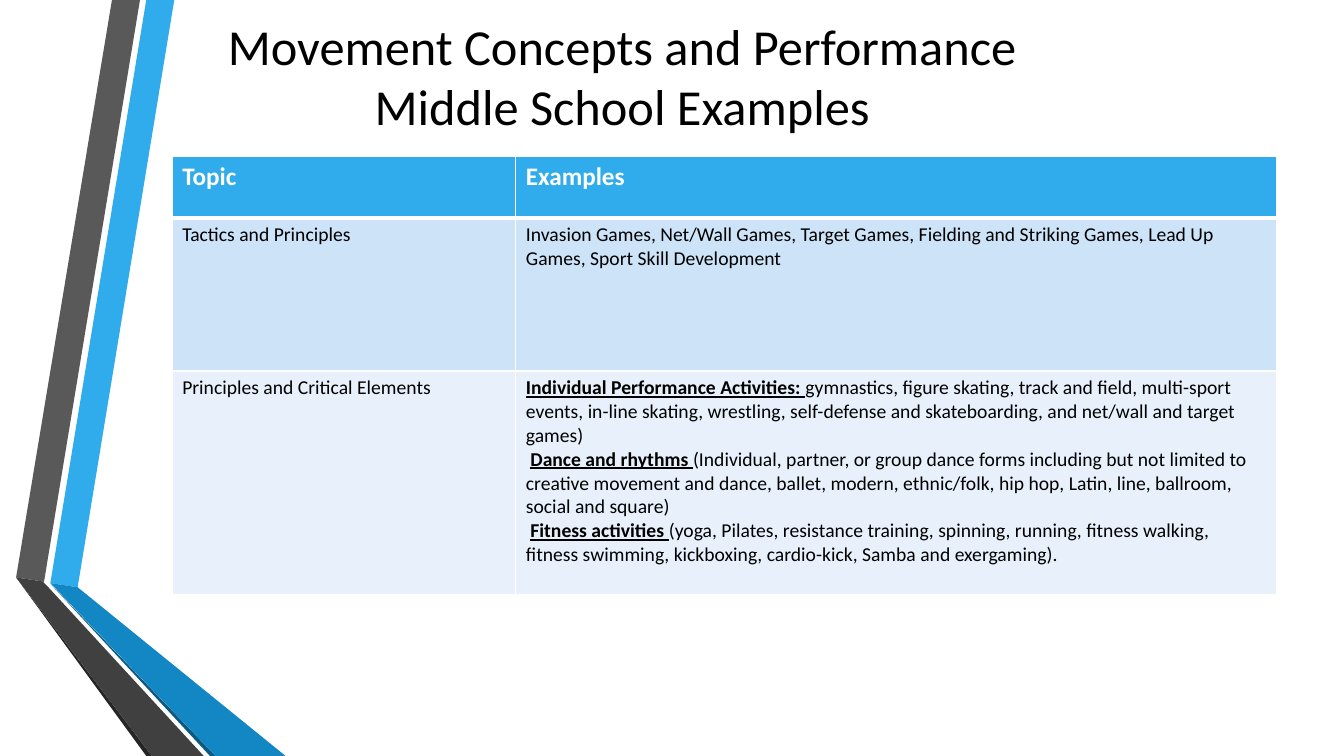
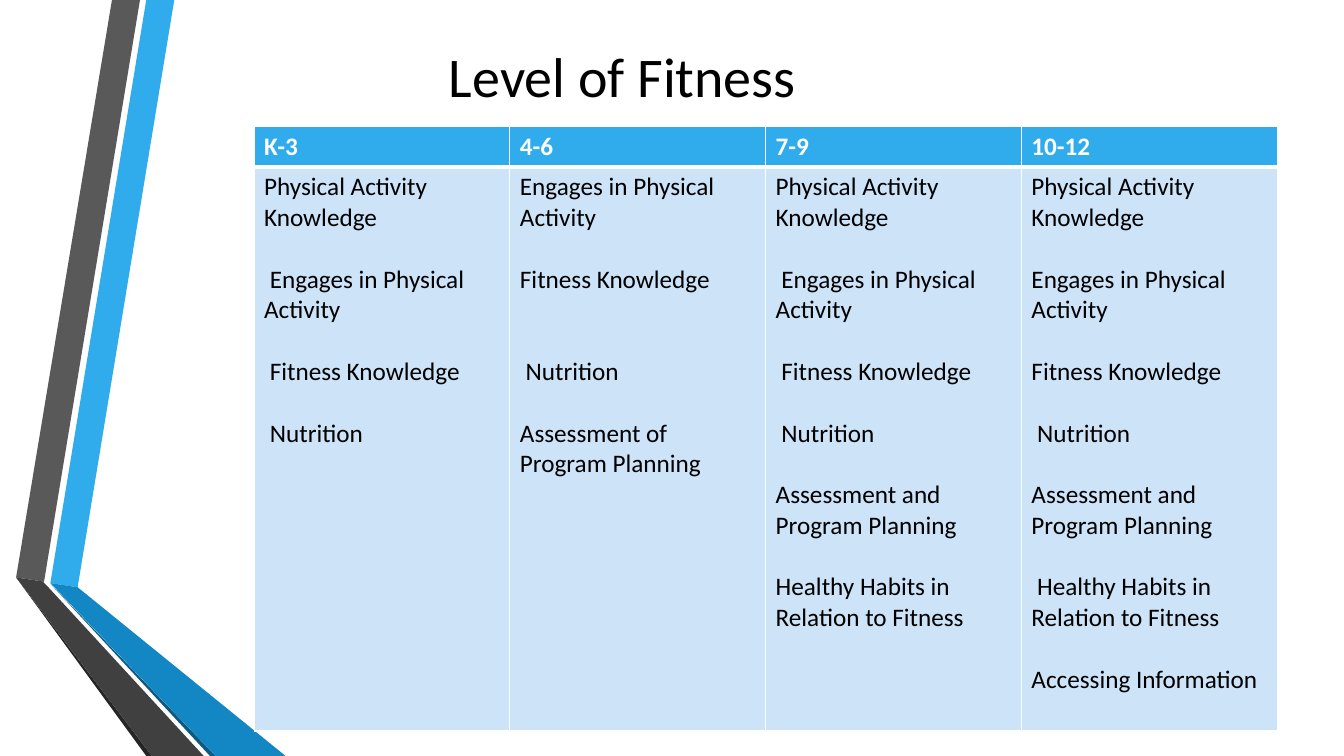
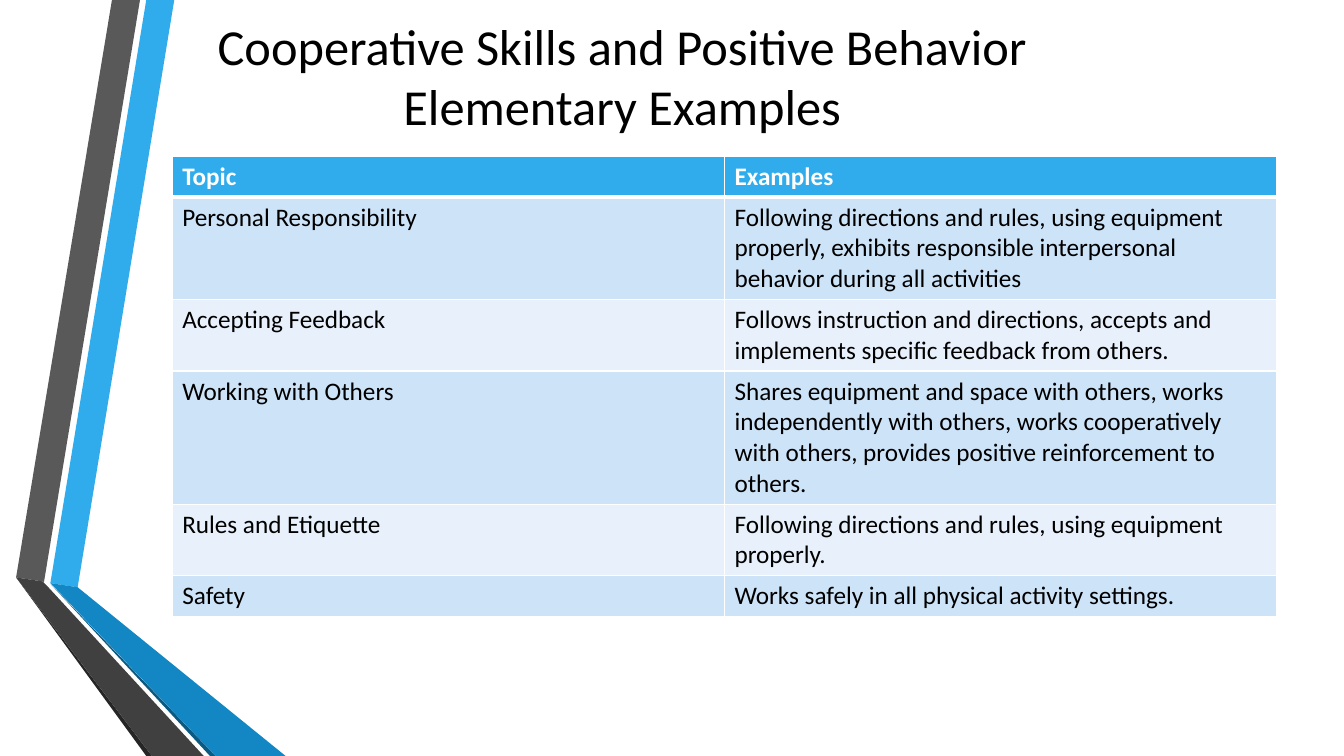
import pptx
import pptx.dml.color
import pptx.enum.text
import pptx.oxml
import pptx.oxml.ns
import pptx.util

Pt = pptx.util.Pt
FONT = "Calibri"
BLACK, WHITE = "000000", "FFFFFF"
BLUE, PALE, PALER = "30ACEC", "CDE3F8", "E8F1FB"
TITLE_BOX = {"left": Pt(123), "top": Pt(17), "width": Pt(643), "height": Pt(73.5)}
TABLE_LEFT, TABLE_TOP, TABLE_WIDTH = 123, 111.5, 789
LINE, CELL_MARGINS = 22, 7  # line height of 18 pt text; top and bottom margins

RIBBONS = [
    (BLUE, [(36, 416.5), (55.5, 419.5), (124.5, 0), (104.5, 0)]),
    ("595959", [(100, 0), (80, 0), (11.5, 412.5), (31.5, 415.5)]),
    ("262626", [(11.5, 412.5), (104.5, 540), (108.5, 540)]),
    ("0C5A82", [(36, 417), (150, 540), (154, 540)]),
    ("1287C3", [(36, 416.5), (154, 540), (204, 540), (55.5, 419.5)]),
    ("404040", [(11.5, 412.5), (108.5, 540), (145.5, 540), (34.5, 419.5),
                (31, 416), (31.5, 415.5)]),
]

MOVEMENT_ROWS = [
    ["Topic", "Examples"],
    ["Tactics and Principles",
     "Invasion Games, Net/Wall Games, Target Games, Fielding and Striking Games, "
     "Lead Up Games, Sport Skill Development"],
    ["Principles and Critical Elements",
     ["**Individual Performance Activities: **gymnastics, figure skating, track and "
      "field, multi-sport events, in-line skating, wrestling, self-defense and "
      "skateboarding, and net/wall and target games)",
      " **Dance and rhythms **(Individual, partner, or group dance forms including "
      "but not limited to creative movement and dance, ballet, modern, ethnic/folk, "
      "hip hop, Latin, line, ballroom, social and square)",
      " **Fitness activities **(yoga, Pilates, resistance training, spinning, "
      "running, fitness walking, fitness swimming, kickboxing, cardio-kick, Samba "
      "and exergaming)."]],
]

FITNESS_ROWS = [
    ["K-3", "4-6", "7-9", "10-12"],
    [["Physical Activity Knowledge", " Engages in Physical Activity",
      " Fitness Knowledge", " Nutrition"],
     ["Engages in Physical Activity", "Fitness Knowledge", " Nutrition",
      "Assessment of Program Planning"],
     ["Physical Activity Knowledge", " Engages in Physical Activity",
      " Fitness Knowledge", " Nutrition", "Assessment and Program Planning",
      "Healthy Habits in Relation to Fitness"],
     ["Physical Activity Knowledge", "Engages in Physical Activity",
      "Fitness Knowledge", " Nutrition", "Assessment and Program Planning",
      " Healthy Habits in Relation to Fitness", "Accessing Information"]],
]

COOPERATION_ROWS = [
    ["Topic", "Examples"],
    ["Personal Responsibility",
     "Following directions and rules, using equipment properly, exhibits responsible "
     "interpersonal behavior during all activities"],
    ["Accepting Feedback",
     "Follows instruction and directions, accepts and implements specific feedback "
     "from others."],
    ["Working with Others",
     "Shares equipment and space with others, works independently with others, works "
     "cooperatively with others, provides positive reinforcement to others."],
    ["Rules and Etiquette", "Following directions and rules, using equipment properly."],
    ["Safety", "Works safely in all physical activity settings."],
]
COOPERATION_LINES = [1, 3, 2, 4, 2, 1]


def rgb(color):
    return pptx.dml.color.RGBColor.from_string(color)


def apply(obj, values):
    for name, value in values.items():
        setattr(obj, name, value)


def format_font(font, size, color, bold=False, underline=False):
    apply(font, {"name": FONT, "size": Pt(size), "bold": bold, "underline": underline})
    font.color.rgb = rgb(color)


def fill_solid(fill, color):
    fill.solid()
    fill.fore_color.rgb = rgb(color)


def set_up_layout(layout, s):
    """Place the title and the ribbons on the layout; s lends its freeform builder."""
    title = layout.placeholders[0]
    apply(title, TITLE_BOX)
    apply(title.text_frame, {
        "vertical_anchor": pptx.enum.text.MSO_ANCHOR.MIDDLE,
        "auto_size": pptx.enum.text.MSO_AUTO_SIZE.NONE,
        "word_wrap": True,
    })
    for i, (color, points) in enumerate(RIBBONS):
        start, *rest = [(Pt(x), Pt(y)) for x, y in points]
        builder = s.shapes.build_freeform(*start)
        builder.add_line_segments(rest, close=True)
        sp = builder.convert_to_shape()
        sp.shadow.inherit = False
        fill_solid(sp.fill, color)
        sp.line.fill.background()
        layout.element.cSld.spTree.insert(2 + i, sp.element)


def add_title(s, text, size):
    title = s.shapes.title
    title.text_frame.text = text
    p = title.text_frame.paragraphs[0]
    p.alignment = pptx.enum.text.PP_ALIGN.CENTER
    format_font(p.runs[0].font, size, BLACK)


def set_borders(cell, top, bottom):
    """Draw white borders; call before filling, as the schema puts lines first."""
    tcPr = cell._tc.get_or_add_tcPr()
    for side, width in (("L", 1), ("R", 1), ("T", top), ("B", bottom)):
        tcPr.append(pptx.oxml.parse_xml(
            f'<a:ln{side} {pptx.oxml.ns.nsdecls("a")} w="{Pt(width)}"><a:solidFill>'
            f'<a:srgbClr val="{WHITE}"/></a:solidFill></a:ln{side}>'))


def write_cell(cell, content, size, color, bold, gap):
    """Write one paragraph per item; text between ** marks is a lead-in heading."""
    tf = cell.text_frame
    for i, text in enumerate([content] if isinstance(content, str) else content):
        p = tf.add_paragraph() if i else tf.paragraphs[0]
        if i and gap:
            p.space_before = Pt(gap)
        for j, part in enumerate(text.split("**")):
            if part:
                r = p.add_run()
                r.text = part
                lead = j % 2 == 1
                format_font(r.font, size, color, bold or lead, lead)


def add_table(s, rows, widths, heights, left=TABLE_LEFT, top=TABLE_TOP, size=18, gap=0):
    frame = s.shapes.add_table(len(rows), len(widths), Pt(left), Pt(top),
                               Pt(sum(widths)), Pt(sum(heights)))
    table = frame.table
    for column, width in zip(table.columns, widths):
        column.width = Pt(width)
    for i, (row, height) in enumerate(zip(rows, heights)):
        table.rows[i].height = Pt(height)
        header = i == 0
        fill = BLUE if header else (PALER, PALE)[i % 2]
        for j, content in enumerate(row):
            cell = table.cell(i, j)
            set_borders(cell, 3 if i == 1 else 1, 3 if header else 1)
            fill_solid(cell.fill, fill)
            write_cell(cell, content, 18 if header else size,
                       WHITE if header else BLACK, header, gap)
    return table


def main():
    prs = pptx.Presentation()
    apply(prs, {"slide_width": Pt(960), "slide_height": Pt(540)})
    layout = prs.slide_layouts[5]
    movement, fitness, cooperation = [prs.slides.add_slide(layout) for _ in range(3)]
    set_up_layout(layout, movement)

    add_title(movement, "Movement Concepts and Performance Middle School Examples", 36)
    add_table(movement, MOVEMENT_ROWS, [245.5, 543.5], [44, 109.5, 160], size=14)

    add_title(fitness, "Level of Fitness", 40)
    table = add_table(fitness, FITNESS_ROWS, [182.7] * 4, [29, 403],
                      left=181.5, top=90, gap=LINE)
    nutrition = table.cell(1, 1).text_frame.paragraphs[2]
    nutrition.space_before = Pt(2 * LINE)

    add_title(cooperation, "Cooperative Skills and Positive Behavior Elementary Examples", 36)
    add_table(cooperation, COOPERATION_ROWS, [TABLE_WIDTH / 2] * 2,
              [LINE * n + CELL_MARGINS for n in COOPERATION_LINES])

    prs.save("out.pptx")


if __name__ == "__main__":
    main()
